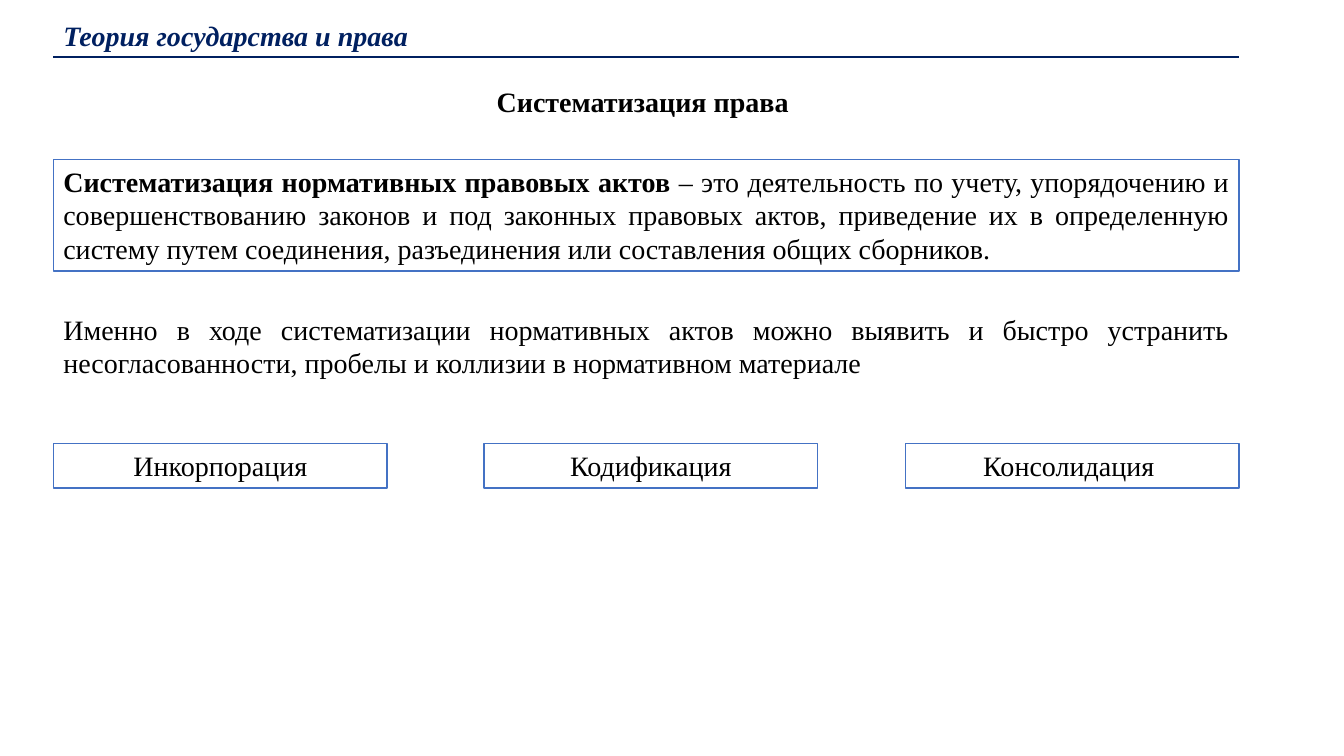
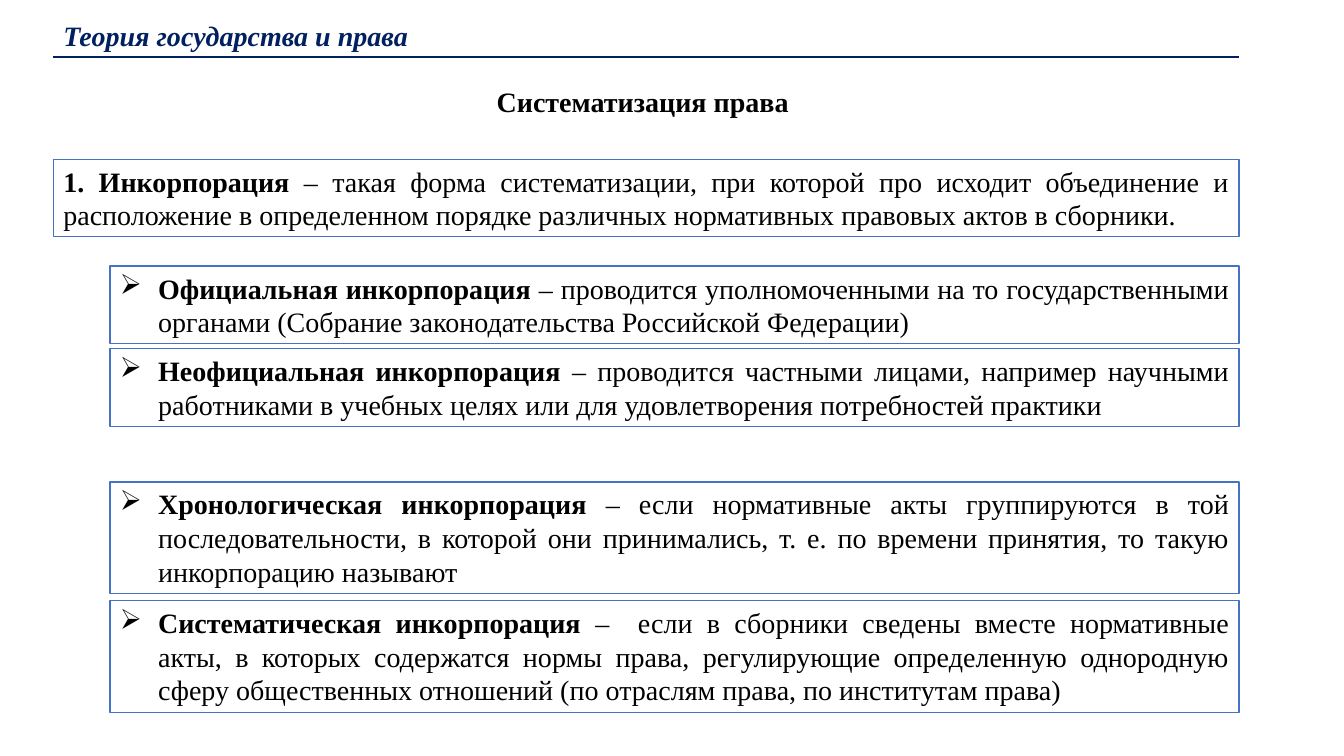
"""Builds two lecture slides on the systematisation of law."""
from lxml import etree
from pptx import Presentation
from pptx.dml.color import RGBColor
from pptx.enum.shapes import MSO_CONNECTOR, MSO_SHAPE
from pptx.enum.text import MSO_ANCHOR, MSO_AUTO_SIZE, PP_ALIGN
from pptx.oxml.ns import qn
from pptx.util import Inches, Pt

RECTANGLE = MSO_SHAPE.RECTANGLE
STRAIGHT = MSO_CONNECTOR.STRAIGHT
TOP = MSO_ANCHOR.TOP
NO_FIT = MSO_AUTO_SIZE.NONE
LEFT, CENTER, JUSTIFY = PP_ALIGN.LEFT, PP_ALIGN.CENTER, PP_ALIGN.JUSTIFY

NAVY, BLUE, BLACK, WHITE = "002060", "4472C4", "000000", "FFFFFF"
FONT, SIZE = "Times New Roman", 20
SLIDE_WIDTH, SLIDE_HEIGHT = 13.33, 7.5
MARGIN, RIGHT_EDGE = 0.53, 12.29
FULL_WIDTH = RIGHT_EDGE - MARGIN
RULE_TOP, HEADER_TOP, TITLE_TOP, DEFINITION_TOP = 0.57, 0.13, 0.79, 1.58
BULLET_LEFT, BULLET_INDENT = 1.09, 0.38
FORM_TOP, FORM_WIDTH = 4.4, 3.31
HEIGHT_BY_LINES = {1: 0.44, 2: 0.77, 3: 1.11}

COURSE = "Теория государства и права"
TITLE = "Систематизация права "

DEFINITION = (
    "Систематизация нормативных правовых актов ",
    "– это деятельность по учету, упорядочению и совершенствованию законов и под законных "
    "правовых актов, приведение их в определенную систему путем соединения, разъединения "
    "или составления общих сборников.",
)
PURPOSE = (
    "Именно в ходе систематизации нормативных актов можно выявить и быстро устранить "
    "несогласованности, пробелы и коллизии в нормативном материале"
)
FORMS = [(MARGIN, "Инкорпорация"), (4.8, "Кодификация"), (8.98, "Консолидация ")]

INCORPORATION = (
    "1. Инкорпорация ",
    "– такая форма систематизации, при которой про исходит объединение и расположение "
    "в определенном порядке различных нормативных правовых актов в сборники.",
)
KINDS = [
    (2.64, 2, "Официальная инкорпорация ",
     "– проводится уполномоченными на то государственными органами "
     "(Собрание законодательства Российской Федерации)"),
    (3.46, 2, "Неофициальная инкорпорация ",
     "– проводится частными лицами, например научными работниками в учебных целях "
     "или для удовлетворения потребностей практики"),
    (4.78, 3, "Хронологическая инкорпорация ",
     "– если нормативные акты группируются в той последовательности, в которой они "
     "принимались, т. е. по времени принятия, то такую инкорпорацию называют"),
    (5.96, 3, "Систематическая инкорпорация ",
     "–  если в сборники сведены вместе нормативные акты, в которых содержатся нормы права, "
     "регулирующие определенную однородную сферу общественных отношений "
     "(по отраслям права, по институтам права) "),
]


def color(value):
    """Turn a hex string into a colour."""
    return RGBColor.from_string(value)


def place(left, top, width, lines):
    """Return the position and size of a box holding some lines of text."""
    return [Inches(length) for length in (left, top, width, HEIGHT_BY_LINES[lines])]


def write(shape, bold="", plain="", align=JUSTIFY, ink=BLACK, italic=False, wrap=True):
    """Fill a shape with one paragraph: a bold lead, then plain text."""
    frame = shape.text_frame
    frame.auto_size = NO_FIT
    frame.word_wrap = wrap
    frame.vertical_anchor = TOP
    para = frame.paragraphs[0]
    para.alignment = align
    for text, heavy in ((bold, True), (plain, False)):
        if text:
            span = para.add_run()
            span.text = text
            font = span.font
            font.name, font.size = FONT, Pt(SIZE)
            font.bold, font.italic = heavy, italic
            font.color.rgb = color(ink)
    return para


def add_bullet(para):
    """Give a paragraph an arrow bullet with a hanging indent."""
    properties = para._p.get_or_add_pPr()
    indent = Inches(BULLET_INDENT)
    properties.set("marL", str(indent))
    properties.set("indent", str(-indent))
    etree.SubElement(properties, qn("a:buChar")).set("char", "➢")


def add_text(slide, position, **text):
    """Add a plain text box."""
    return write(slide.shapes.add_textbox(*position), **text)


def add_frame(slide, position, **text):
    """Add a white box with a blue outline."""
    box = slide.shapes.add_shape(RECTANGLE, *position)
    box.shadow.inherit = False
    box.fill.solid()
    box.fill.fore_color.rgb = color(WHITE)
    box.line.color.rgb = color(BLUE)
    box.line.width = Pt(1)
    return write(box, **text)


def add_slide(deck):
    """Add a slide with the course name, the rule and the title."""
    slide = deck.slides.add_slide(deck.slide_layouts[5])
    add_text(slide, place(MARGIN, HEADER_TOP, 3.71, 1), bold=COURSE,
             align=LEFT, ink=NAVY, italic=True, wrap=False)
    rule = slide.shapes.add_connector(STRAIGHT, Inches(MARGIN), Inches(RULE_TOP),
                                      Inches(RIGHT_EDGE), Inches(RULE_TOP))
    rule.line.color.rgb = color(NAVY)
    rule.line.width = Pt(1.5)
    etree.SubElement(rule._element.spPr, qn("a:effectLst"))
    title = slide.shapes.title
    title.left, title.top, title.width, title.height = place(MARGIN, TITLE_TOP, FULL_WIDTH, 1)
    write(title, bold=TITLE, align=CENTER)
    return slide


def add_overview(deck):
    """Add the slide with the definition and the three forms."""
    slide = add_slide(deck)
    bold, plain = DEFINITION
    add_frame(slide, place(MARGIN, DEFINITION_TOP, FULL_WIDTH, 3), bold=bold, plain=plain)
    add_text(slide, place(MARGIN, 3.05, FULL_WIDTH, 2), plain=PURPOSE)
    for left, form in FORMS:
        add_frame(slide, place(left, FORM_TOP, FORM_WIDTH, 1), plain=form, align=CENTER)


def add_incorporation(deck):
    """Add the slide with the kinds of incorporation."""
    slide = add_slide(deck)
    bold, plain = INCORPORATION
    add_frame(slide, place(MARGIN, DEFINITION_TOP, FULL_WIDTH, 2), bold=bold, plain=plain)
    for top, lines, bold, plain in KINDS:
        position = place(BULLET_LEFT, top, RIGHT_EDGE - BULLET_LEFT, lines)
        add_bullet(add_frame(slide, position, bold=bold, plain=plain))


def main():
    """Build and save the deck."""
    deck = Presentation()
    deck.slide_width, deck.slide_height = Inches(SLIDE_WIDTH), Inches(SLIDE_HEIGHT)
    add_overview(deck)
    add_incorporation(deck)
    deck.save("out.pptx")


if __name__ == "__main__":
    main()
